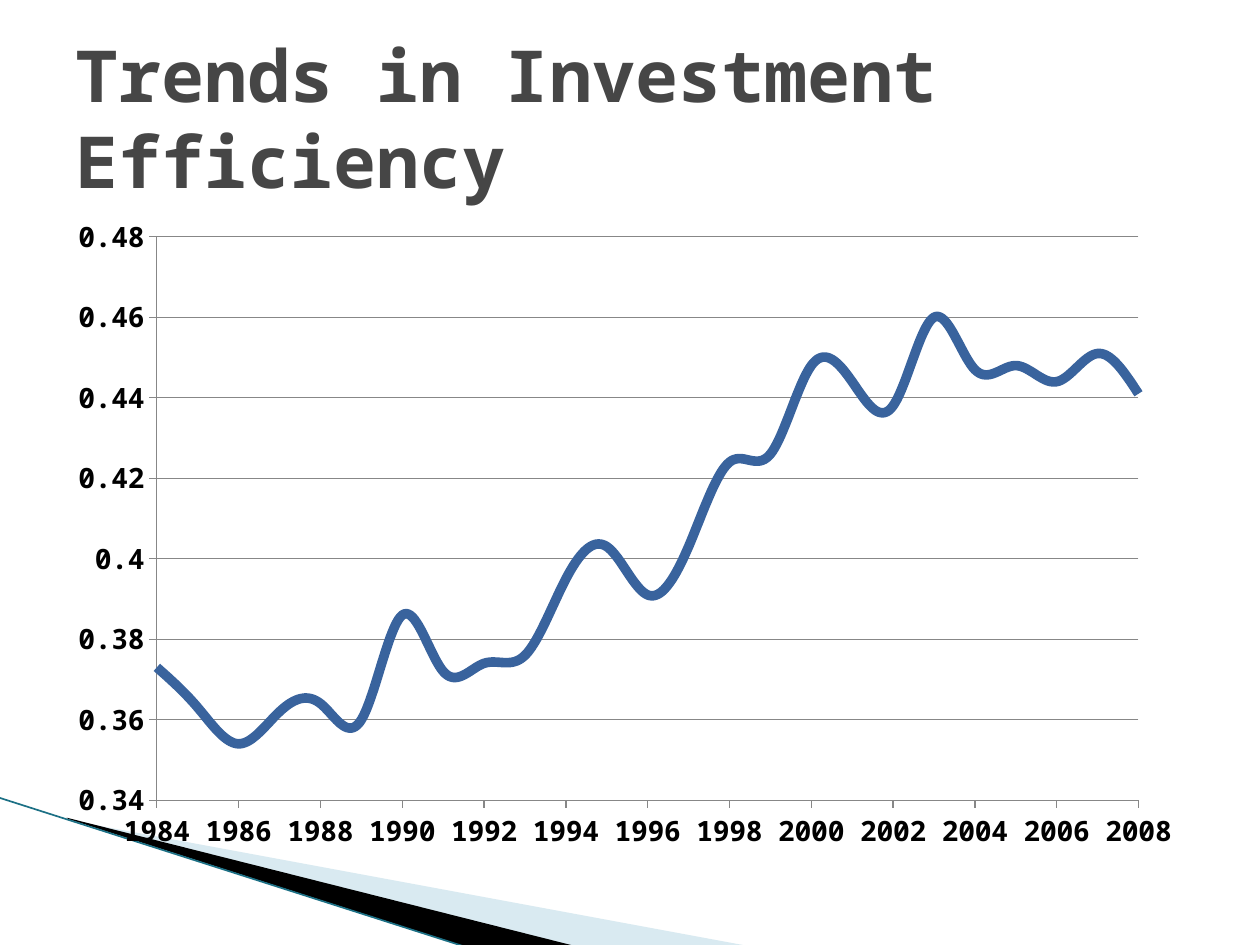
from lxml.etree import SubElement
from pptx import Presentation
from pptx.chart.data import XyChartData
from pptx.dml.color import RGBColor
from pptx.enum.chart import XL_CHART_TYPE as ChartType, XL_TICK_MARK as Tick
from pptx.enum.shapes import MSO_CONNECTOR as Connector
from pptx.enum.text import MSO_ANCHOR as Anchor, PP_ALIGN as Align
from pptx.oxml.ns import qn
from pptx.util import Inches, Pt

EFFICIENCY = [
    0.373, 0.363, 0.354, 0.362, 0.364, 0.36, 0.386, 0.372, 0.374,
    0.376, 0.395, 0.403, 0.391, 0.403, 0.424, 0.426, 0.448, 0.444,
    0.438, 0.46, 0.447, 0.448, 0.444, 0.451, 0.441,
]
FIRST_YEAR = 1984


def color(hex_string):
    return RGBColor.from_string(hex_string)


def apply(target, values):
    for name, value in values.items():
        setattr(target, name, value)


class SlideBuilder:
    """Style and current slide; lengths are grid cells, 100 columns by 75 rows."""

    CELL = Inches(0.1)
    FONT = "Noto Sans Mono"
    GRID = "878787"

    def __init__(self, deck):
        apply(deck, {"slide_width": self.grid(100), "slide_height": self.grid(75)})
        self.slide = deck.slides.add_slide(deck.slide_layouts[5])
        self.shapes = self.slide.shapes

    def grid(self, cells):
        return round(cells * self.CELL)

    def box(self, *cells):
        return [self.grid(cell) for cell in cells]

    def font(self, font, size, hex_string):
        apply(font, {"name": self.FONT, "size": Pt(size), "bold": True})
        font.color.rgb = color(hex_string)

    def stroke(self, line, hex_string, width):
        line.color.rgb = color(hex_string)
        line.width = Pt(width)

    def title(self, text, *cells):
        title = self.shapes.title
        apply(title, dict(zip(("left", "top", "width", "height"), self.box(*cells))))
        frame = title.text_frame
        apply(frame, {"text": text, "word_wrap": True,
                      "vertical_anchor": Anchor.MIDDLE})
        frame.paragraphs[0].alignment = Align.LEFT
        self.font(frame.paragraphs[0].runs[0].font, 41, "464646")

    def wedge(self, corners, hex_string, opacity=100):
        start, *rest = [self.box(*corner) for corner in corners]
        outline = self.shapes.build_freeform(*start)
        outline.add_line_segments(rest, close=True)
        wedge = outline.convert_to_shape()
        wedge.shadow.inherit = False
        wedge.line.fill.background()
        wedge.fill.solid()
        wedge.fill.fore_color.rgb = color(hex_string)
        if opacity < 100:
            tint = wedge.fill._xPr.find(qn("a:solidFill"))[0]
            SubElement(tint, qn("a:alpha"), val=str(opacity * 1000))

    def edge(self, start, end, hex_string, width):
        edge = self.shapes.add_connector(
            Connector.STRAIGHT, *self.box(*start), *self.box(*end))
        self.stroke(edge.line, hex_string, width)
        SubElement(edge._element.spPr, qn("a:effectLst"))

    def trend_chart(self, first_year, values, *cells):
        data = XyChartData()
        series = data.add_series("Series 1")
        for year, value in enumerate(values, first_year):
            series.add_data_point(year, value)
        chart = self.shapes.add_chart(
            ChartType.XY_SCATTER_SMOOTH_NO_MARKERS, *self.box(*cells), data).chart
        apply(chart, {"has_legend": False, "has_title": False})
        self.font(chart.font, 16, "000000")

        # Axes
        last_year = first_year + len(values) - 1
        scales = (
            (chart.category_axis, first_year, last_year, 2, False),
            (chart.value_axis, 0.34, 0.48, 0.02, True),
        )
        for axis, low, high, step, gridlines in scales:
            apply(axis, {"minimum_scale": low, "maximum_scale": high,
                         "major_unit": step, "has_major_gridlines": gridlines,
                         "major_tick_mark": Tick.OUTSIDE,
                         "minor_tick_mark": Tick.NONE})
            apply(axis.tick_labels, {"number_format": "General",
                                     "number_format_is_linked": False})
            self.stroke(axis.format.line, self.GRID, 0.75)
        self.stroke(chart.value_axis.major_gridlines.format.line, self.GRID, 0.75)

        # Curve
        plot = chart.plots[0]
        plot.vary_by_categories = False
        curve = plot.series[0]
        self.stroke(curve.format.line, "39639D", 5.5)
        for smooth in curve._element.findall(qn("c:smooth")):
            smooth.set("val", "1")

        self.place_plot(chart, x=0.09, y=0.05, w=0.86, h=0.86)

    def place_plot(self, chart, **shares):
        area = chart._chartSpace.chart.plotArea
        for old in area.findall(qn("c:layout")):
            area.remove(old)
        layout = SubElement(area, qn("c:layout"))
        area.insert(0, layout)
        manual = SubElement(layout, qn("c:manualLayout"))
        settings = {"layoutTarget": "inner", "xMode": "edge", "yMode": "edge", **shares}
        for name, value in settings.items():
            SubElement(manual, qn(f"c:{name}"), val=str(value))


def main():
    deck = Presentation()
    page = SlideBuilder(deck)

    # Corner decoration
    page.wedge([(5.5, 65.1), (59.5, 75.1), (45.6, 75.1), (5.5, 65)], "A0CBDC", 40)
    page.wedge([(5.3, 64.9), (45.7, 75.1), (37.2, 75.2), (5.4, 65)], "000000")
    page.edge((-0.1, 63.3), (37.1, 75.2), "1C7085", 0.95)

    # Title and chart
    page.title("Trends in Investment Efficiency", 5, 3, 90, 12.5)
    page.trend_chart(FIRST_YEAR, EFFICIENCY, 4.3, 16.2, 90.6, 52)

    deck.save("out.pptx")


if __name__ == "__main__":
    main()
